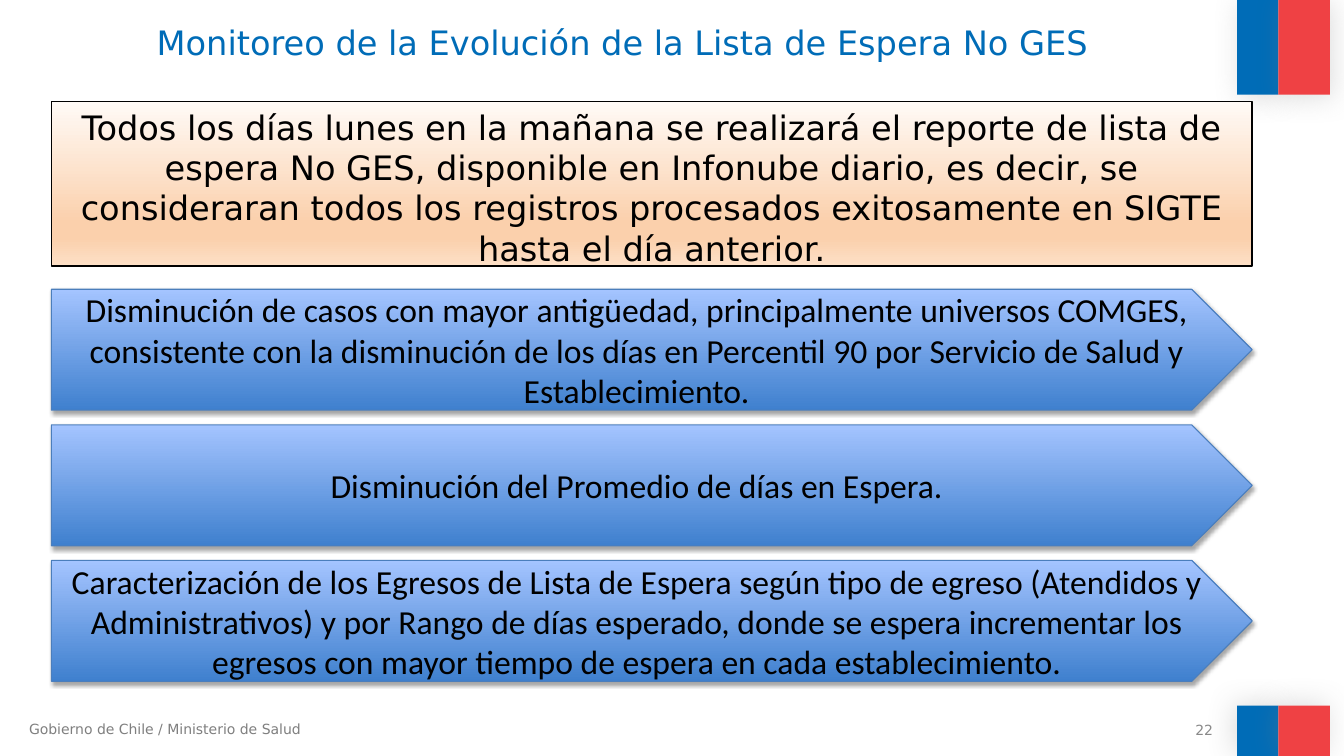
from dataclasses import dataclass
from lxml.etree import SubElement
from pptx import Presentation
from pptx.dml.color import RGBColor
from pptx.enum.shapes import MSO_SHAPE
from pptx.enum.text import MSO_ANCHOR, PP_ALIGN
from pptx.oxml.ns import qn
from pptx.util import Inches, Pt

TITLE = "Monitoreo de la Evolución de la Lista de Espera No GES"
REPORT = (
    "Todos los días lunes en la mañana se realizará el reporte de lista de espera No GES, "
    "disponible en Infonube diario, es decir, se consideraran todos los registros procesados "
    "exitosamente en SIGTE hasta el día anterior."
)
GOALS = [
    "Disminución de casos con mayor antigüedad, principalmente universos COMGES, consistente "
    "con la disminución de los días en Percentil 90 por Servicio de Salud y Establecimiento.",
    "Disminución del Promedio de días en Espera.",
    "Caracterización de los Egresos de Lista de Espera según tipo de egreso (Atendidos y "
    "Administrativos) y por Rango de días esperado, donde se espera incrementar los egresos "
    "con mayor tiempo de espera en cada establecimiento.",
]
FOOTER = "Gobierno de Chile / Ministerio de Salud"
PAGE = "22"


@dataclass(frozen=True)
class Theme:
    blue: str = "006CB7"
    red: str = "EF4144"
    ink: str = "000000"
    footer: str = "7F7F7F"
    page: str = "898989"
    goal_line: str = "4B7EBC"
    report_fill: tuple = ((0, "FFFAF6"), (74, "FBD0AC"), (83, "FBD0AC"), (100, "FDE0C7"))
    goal_fill: tuple = ((0, "3F80CE"), (100, "A4C4FF"))
    goal_shadow: tuple = ("000000", 35, 3.1, 1.8, 90)
    body: int = 24
    small: int = 10
    sans: str = "DejaVu Sans"
    goal_font: str = "Calibri"


THEME = Theme()
WIDTH, HEIGHT = 13.33, 7.5
LEFT, BAND = 0.51, 11.91
GOAL_TOP, GOAL_HEIGHT, GOAL_STEP = 2.87, 1.2, 1.345
STRIPES = [(12.27, 0.41, THEME.blue), (12.68, 0.51, THEME.red)]
STRIPE_ROWS = [(0, 0.94, 45), (7, 0.5, 215)]

deck = Presentation()
deck.slide_width, deck.slide_height = Inches(WIDTH), Inches(HEIGHT)
slide = deck.slides.add_slide(deck.slide_layouts[6])


def write(holder, text, size=THEME.body, font=THEME.sans, color=THEME.ink,
          align=PP_ALIGN.CENTER, anchor=MSO_ANCHOR.TOP):
    frame = holder.text_frame
    frame.word_wrap = True
    frame.vertical_anchor = anchor
    paragraph = frame.paragraphs[0]
    paragraph.alignment = align
    run = paragraph.add_run()
    run.text = text
    run.font.size, run.font.name = Pt(size), font
    run.font.color.rgb = RGBColor.from_string(color)


def label(box, text, **style):
    write(slide.shapes.add_textbox(*map(Inches, box)), text, **style)


def add_color(parent, color, alpha=100):
    tint = SubElement(parent, qn("a:srgbClr"), val=color)
    if alpha < 100:
        SubElement(tint, qn("a:alpha"), val=str(alpha * 1000))


def paint_gradient(panel, stops, angle):
    panel.fill.gradient()
    gradient = panel._element.spPr.find(qn("a:gradFill"))
    for part in list(gradient):
        gradient.remove(part)
    stop_list = SubElement(gradient, qn("a:gsLst"))
    for position, color in stops:
        add_color(SubElement(stop_list, qn("a:gs"), pos=str(position * 1000)), color)
    SubElement(gradient, qn("a:lin"), ang=str(angle * 60000), scaled="0")


def cast_shadow(panel, color, alpha, blur, distance, direction):
    effects = panel._element.spPr.find(qn("a:effectLst"))
    shade = SubElement(effects, qn("a:outerShdw"), blurRad=str(Pt(blur)), dist=str(Pt(distance)),
                       dir=str(direction * 60000), rotWithShape="0")
    add_color(shade, color, alpha)


def add_panel(kind, box, line=None, line_width=1):
    panel = slide.shapes.add_shape(kind, *map(Inches, box))
    panel.shadow.inherit = False
    if line:
        panel.line.color.rgb = RGBColor.from_string(line)
        panel.line.width = Pt(line_width)
    else:
        panel.line.fill.background()
    return panel


for top, height, direction in STRIPE_ROWS:
    for left, width, color in STRIPES:
        stripe = add_panel(MSO_SHAPE.RECTANGLE, (left, top, width, height))
        stripe.fill.solid()
        stripe.fill.fore_color.rgb = RGBColor.from_string(color)
        cast_shadow(stripe, "808080", 25, 20, 3, direction)

label((0.19, 7.1, 4.03, 0.27), FOOTER, size=THEME.small, color=THEME.footer, align=PP_ALIGN.LEFT)
label((0.22, 0.17, BAND, 0.75), TITLE, color=THEME.blue)
label((9.02, 7.14, 3.11, 0.21), PAGE, size=THEME.small, color=THEME.page,
      align=PP_ALIGN.RIGHT, anchor=MSO_ANCHOR.MIDDLE)

report = add_panel(MSO_SHAPE.RECTANGLE, (LEFT, 1.01, BAND, 1.63), THEME.ink)
paint_gradient(report, THEME.report_fill, 90)
write(report, REPORT)

for row, goal_text in enumerate(GOALS):
    goal = add_panel(MSO_SHAPE.PENTAGON, (LEFT, GOAL_TOP + row * GOAL_STEP, BAND, GOAL_HEIGHT),
                     THEME.goal_line, 0.75)
    paint_gradient(goal, THEME.goal_fill, 270)
    cast_shadow(goal, *THEME.goal_shadow)
    write(goal, goal_text, font=THEME.goal_font, anchor=MSO_ANCHOR.MIDDLE)

deck.save("out.pptx")
